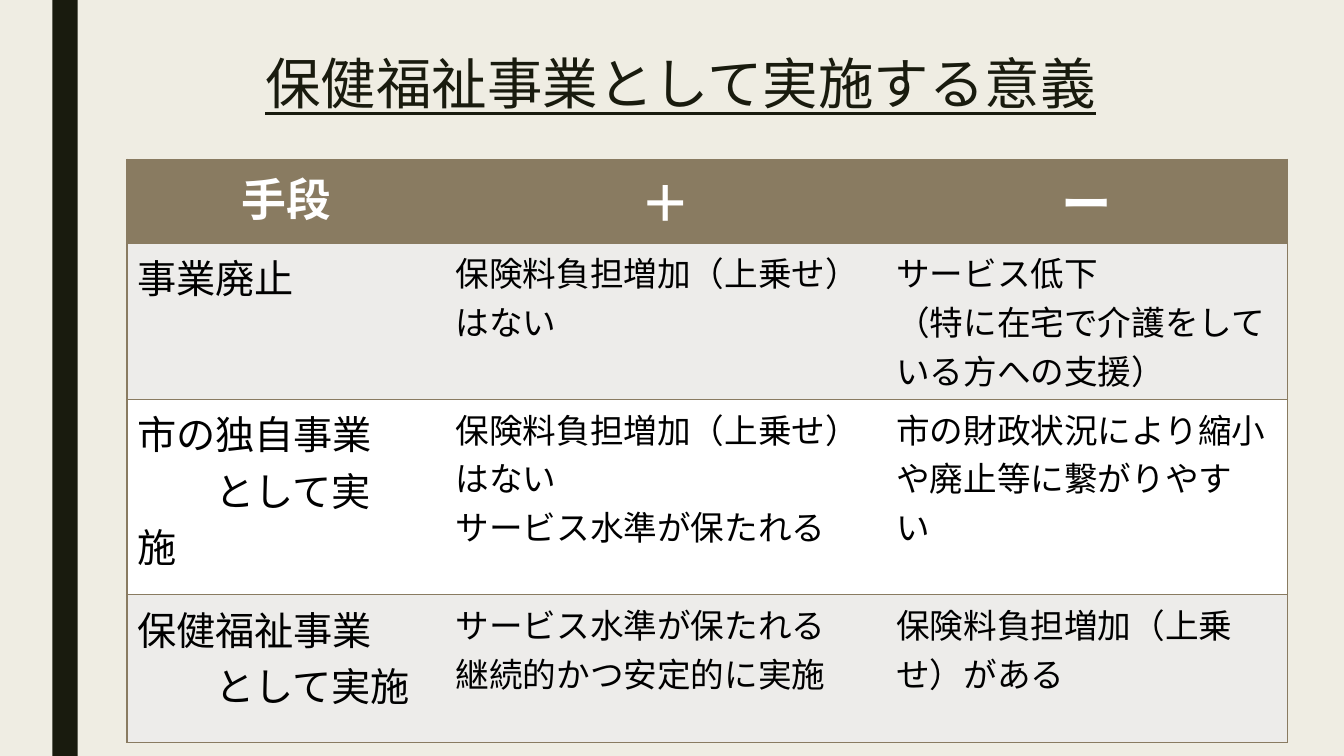
from pptx import Presentation
from pptx.dml.color import RGBColor
from pptx.enum.shapes import MSO_SHAPE
from pptx.enum.text import MSO_ANCHOR, PP_ALIGN
from pptx.oxml.ns import qn
from pptx.util import Inches, Pt
from lxml import etree

RECT = MSO_SHAPE.RECTANGLE
TOP = MSO_ANCHOR.TOP
LEFT, MID = PP_ALIGN.LEFT, PP_ALIGN.CENTER
FONT = "Roboto"
HUES = {
    "page": "EFEDE3", "dark": "191B0E", "brown": "897B61",
    "band": "EDECEA", "white": "FFFFFF", "black": "000000",
}
PLAIN = "{2D5ABB26-0587-4C30-8999-92F81FD0307C}"
WIDE, HIGH = 13.33, 7.5
COLS = [3.16, 4.37, 3.98]
ROWS = [0.83, 1.55, 1.94, 1.47]
HEADS = [("手段", 32), ("＋", 36), ("ー", 36)]
BODY = [
    [["事業廃止"],
     ["保険料負担増加（上乗せ）はない"],
     ["サービス低下", "（特に在宅で介護をしている方への支援）"]],
    [["市の独自事業", "として実施"],
     ["保険料負担増加（上乗せ）はない", "サービス水準が保たれる"],
     ["市の財政状況により縮小や廃止等に繋がりやすい　"]],
    [["保健福祉事業", "として実施"],
     ["サービス水準が保たれる", "継続的かつ安定的に実施"],
     ["保険料負担増加（上乗せ）がある"]],
]


def hue(name):
    return RGBColor.from_string(HUES[name])


def style(para, size, tint, align=LEFT, bold=False):
    para.alignment = align
    font = para.font
    font.name, font.size, font.bold = FONT, Pt(size), bold
    font.color.rgb = hue(tint)


def border(cell, sides):
    props = cell._tc.get_or_add_tcPr()
    for side in sides:
        line = etree.SubElement(props, qn("a:ln" + side), w=str(Pt(1)))
        solid = etree.SubElement(line, qn("a:solidFill"))
        etree.SubElement(solid, qn("a:srgbClr"), val=HUES["brown"])


def paint(cell, tint):
    cell.fill.solid()
    cell.fill.fore_color.rgb = hue(tint)


def write(cell, lines, size, tint, align=LEFT, bold=False):
    frame = cell.text_frame
    frame.text = "\n".join(lines)
    for para in frame.paragraphs:
        style(para, size, tint, align, bold)


def add_bar(slide, left, top, width, height):
    bar = slide.shapes.add_shape(
        RECT, Inches(left), Inches(top), Inches(width), Inches(height))
    bar.shadow.inherit = False
    bar.fill.solid()
    bar.fill.fore_color.rgb = hue("dark")
    bar.line.fill.background()


def add_title(slide, left, top, width, height):
    title = slide.shapes.title
    title.left, title.top = Inches(left), Inches(top)
    title.width, title.height = Inches(width), Inches(height)
    frame = title.text_frame
    frame.text = "保健福祉事業として実施する意義"
    frame.vertical_anchor = TOP
    frame.margin_top = 0
    para = frame.paragraphs[0]
    para.line_spacing = 0.89
    style(para, 39.6, "dark", MID)
    para.font.underline = True


def add_grid(slide, left, top):
    frame = slide.shapes.add_table(
        len(ROWS), len(COLS), Inches(left), Inches(top),
        Inches(sum(COLS)), Inches(sum(ROWS)))
    grid = frame.table
    grid._tbl.tblPr.find(qn("a:tableStyleId")).text = PLAIN
    for col, width in zip(grid.columns, COLS):
        col.width = Inches(width)
    for row, height in zip(grid.rows, ROWS):
        row.height = Inches(height)
    last = len(COLS) - 1
    for r in range(len(ROWS)):
        for c in range(len(COLS)):
            cell = grid.cell(r, c)
            border(cell, {0: "LTB", last: "RTB"}.get(c, "TB"))
            if r == 0:
                text, size = HEADS[c]
                paint(cell, "brown")
                write(cell, [text], size, "white", MID, True)
            else:
                paint(cell, "band" if r % 2 else "white")
                write(cell, BODY[r - 1][c], 24 if c else 28, "black")
        if r:
            for para in grid.cell(r, 0).text_frame.paragraphs[1:]:
                para._p.get_or_add_pPr().set("indent", str(Pt(56)))
    grid.cell(2, 0).margin_right = Inches(0.4)


def main():
    deck = Presentation()
    deck.slide_width, deck.slide_height = Inches(WIDE), Inches(HIGH)
    slide = deck.slides.add_slide(deck.slide_layouts[5])
    slide.background.fill.solid()
    slide.background.fill.fore_color.rgb = hue("page")
    add_bar(slide, 0.52, 0, 0.25, HIGH)
    add_title(slide, 1.5, 0.57, 10.5, 0.78)
    add_grid(slide, 1.26, 1.58)
    deck.save("out.pptx")


if __name__ == "__main__":
    main()
